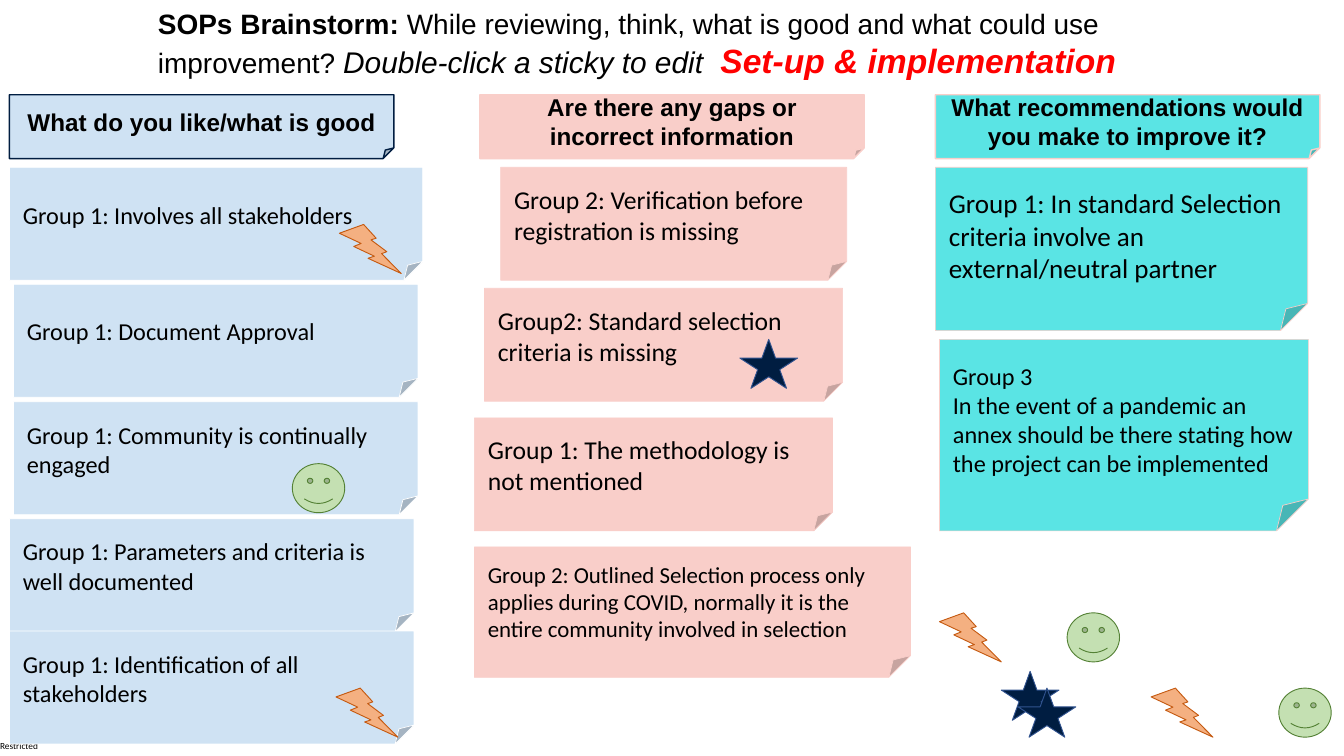
import pptx
import pptx.util
import pptx.dml.color
import pptx.enum.shapes
import pptx.enum.text

SHAPE = pptx.enum.shapes.MSO_SHAPE
ALIGN = pptx.enum.text.PP_ALIGN
ANCHOR = pptx.enum.text.MSO_ANCHOR
SCALE = 9144
BLUE, PINK, TEAL = "CFE2F3", "F9CEC9", "5AE4E4"
NAVY, WHITE, BLACK, RED = "001D41", "FFFFFF", "000000", "FF0000"


def px(size):
    return pptx.util.Emu(size * SCALE)


def color(code):
    return pptx.dml.color.RGBColor.from_string(code)


class Board:
    """Draws the title, notes and stickers of a brainstorm board on one slide."""

    head_font = "Arial"
    note_font = "Calibri"
    icons = {
        "star": (SHAPE.STAR_5_POINT, 86, NAVY, "31538F"),
        "bolt": (SHAPE.LIGHTNING_BOLT, 92, "F4B081", "C55A11"),
        "smile": (SHAPE.SMILEY_FACE, 78, "C4E0B2", "548135"),
    }

    def __init__(self, slide):
        self.slide = slide

    def style(self, font, name, size, bold=False):
        font.name = name
        font.size = pptx.util.Pt(size)
        font.bold = bold
        font.color.rgb = color(BLACK)

    def inset(self, frame, side, top):
        frame.margin_left = frame.margin_right = px(side)
        frame.margin_top = frame.margin_bottom = px(top)

    def title(self, box, runs):
        shape = self.slide.shapes.title
        shape.left, shape.top, shape.width, shape.height = map(px, box)
        frame = shape.text_frame
        frame.auto_size = pptx.enum.text.MSO_AUTO_SIZE.NONE
        frame.word_wrap = True
        frame.vertical_anchor = ANCHOR.TOP
        self.inset(frame, 20, 10)
        para = frame.paragraphs[0]
        para.alignment = ALIGN.LEFT
        para.font.name = self.head_font
        for text, size, bold, slant, code in runs:
            run = para.add_run()
            run.text = text
            run.font.size = pptx.util.Pt(size)
            run.font.bold = bold
            run.font.italic = slant
            run.font.color.rgb = color(code)

    def shape(self, kind, box, fill, line, width):
        shape = self.slide.shapes.add_shape(kind, *map(px, box))
        shape.shadow.inherit = False
        shape.fill.solid()
        shape.fill.fore_color.rgb = color(fill)
        shape.line.color.rgb = color(line)
        shape.line.width = pptx.util.Pt(width)
        return shape

    def note(self, box, fill, line, text, size, head=False):
        shape = self.shape(SHAPE.FOLDED_CORNER, box, fill, line, 1.5 if head else 0.75)
        frame = shape.text_frame
        frame.text = text
        frame.word_wrap = True
        frame.vertical_anchor = ANCHOR.MIDDLE
        self.inset(frame, 20, 20)
        for para in frame.paragraphs:
            para.alignment = ALIGN.CENTER if head else ALIGN.LEFT
            self.style(para.font, self.head_font if head else self.note_font, size, head)

    def icon(self, name, left, top):
        kind, width, fill, line = self.icons[name]
        self.shape(kind, (left, top, width, 73), fill, line, 1)

    def label(self, box, text, size):
        frame = self.slide.shapes.add_textbox(*map(px, box)).text_frame
        frame.text = text
        frame.word_wrap = False
        frame.vertical_anchor = ANCHOR.MIDDLE
        self.inset(frame, 0, 0)
        self.style(frame.paragraphs[0].font, self.note_font, size)


def main():
    deck = pptx.Presentation()
    deck.slide_width, deck.slide_height = px(2000), px(1125)
    board = Board(deck.slides.add_slide(deck.slide_layouts[5]))

    board.label((0, 1096, 88, 29), "Restricted", 10)
    board.title((215, 0, 1615, 236), [
        ("SOPs Brainstorm:", 30, True, False, BLACK),
        (" While reviewing, think, what is good and what could use improvement? ",
         30, False, False, BLACK),
        ("Double-click a sticky to edit  ", 32, False, True, BLACK),
        ("Set-up & implementation", 36, True, True, RED),
    ])

    heads = [
        (14, BLUE, NAVY, "What do you like/what is good"),
        (714, PINK, PINK, "Are there any gaps or incorrect information"),
        (1392, TEAL, PINK, "What recommendations would you make to improve it?"),
    ]
    for left, fill, line, text in heads:
        board.note((left, 141, 572, 95), fill, line, text, 26, head=True)

    likes = [
        (14, 249, 615, "Group 1: Involves all stakeholders"),
        (20, 423, 602, "Group 1: Document Approval"),
        (20, 598, 602, "Group 1: Community is continually engaged"),
        (14, 772, 602, "Group 1: Parameters and criteria is well documented"),
        (14, 939, 602, "Group 1: Identification of all stakeholders"),
    ]
    for left, top, width, text in likes:
        board.note((left, top, width, 168), BLUE, WHITE, text, 26)

    gaps = [
        ((745, 249, 515, 168), 27.5, "Group 2: Verification before registration is missing"),
        ((721, 429, 533, 168), 27.5, "Group2: Standard selection criteria is missing"),
        ((706, 622, 533, 168), 27.5, "Group 1: The methodology is not mentioned"),
        ((706, 814, 649, 194), 24.5, "Group 2: Outlined Selection process only applies during "
         "COVID, normally it is the entire community involved in selection"),
    ]
    for box, size, text in gaps:
        board.note(box, PINK, PINK, text, size)

    ideas = [
        ((1392, 249, 554, 243), 29, "Group 1: In standard Selection criteria involve an "
         "external/neutral partner"),
        ((1398, 505, 549, 285), 26, "Group 3\nIn the event of a pandemic an annex should be "
         "there stating how the project can be implemented"),
    ]
    for box, size, text in ideas:
        board.note(box, TEAL, PINK, text, size)

    spots = {
        "star": [(1490, 999), (1515, 1024), (1101, 505)],
        "bolt": [(1398, 912), (1713, 1024), (500, 1024), (505, 334)],
        "smile": [(1588, 912), (1903, 1024), (435, 690)],
    }
    for name, places in spots.items():
        for left, top in places:
            board.icon(name, left, top)

    deck.save("out.pptx")


if __name__ == "__main__":
    main()
